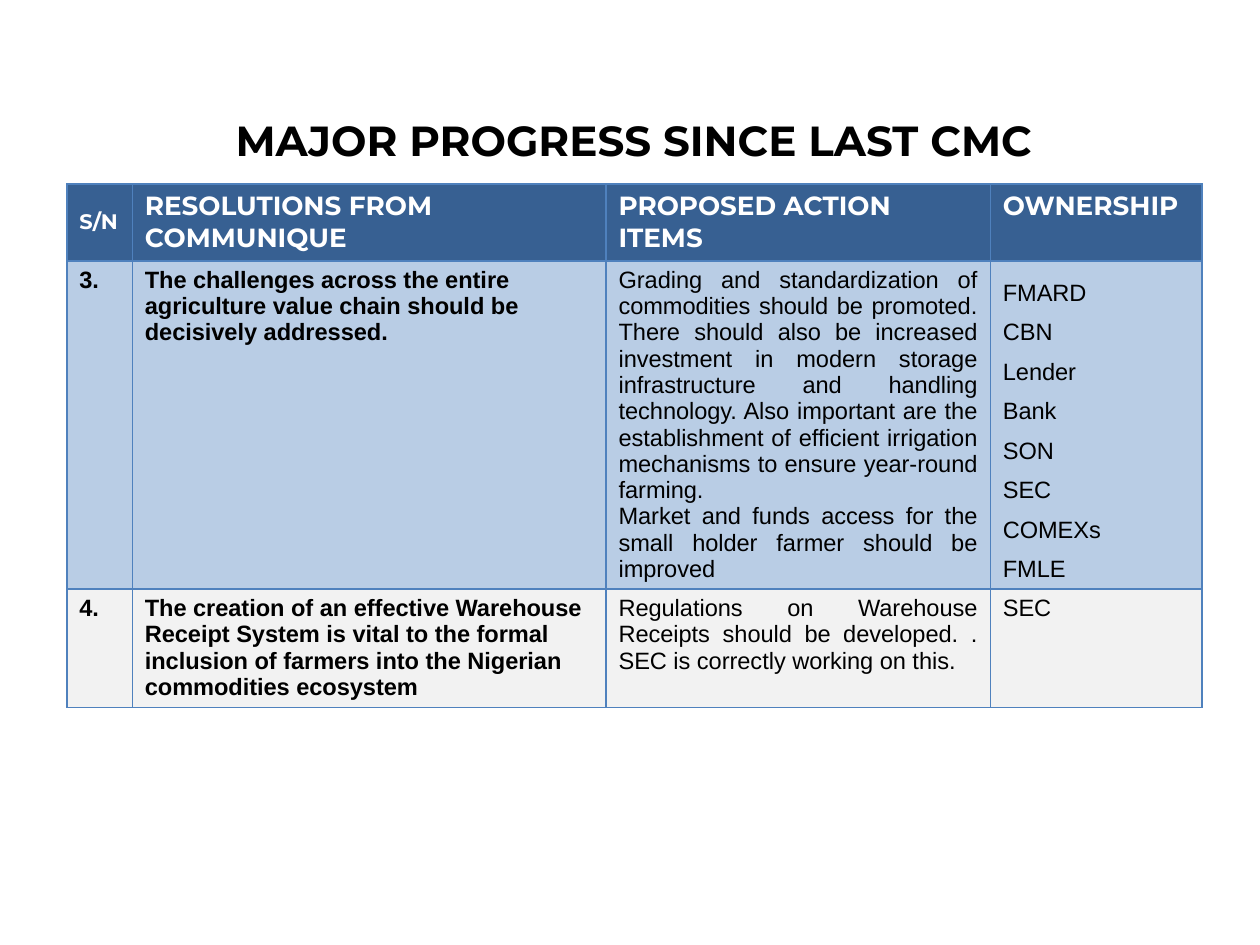
from lxml import etree
from pptx import Presentation
from pptx.dml.color import RGBColor
from pptx.enum.text import MSO_ANCHOR, PP_ALIGN
from pptx.oxml.ns import qn
from pptx.util import Inches, Pt

LEFT, CENTER, JUSTIFY = PP_ALIGN.LEFT, PP_ALIGN.CENTER, PP_ALIGN.JUSTIFY
TOP, MIDDLE = MSO_ANCHOR.TOP, MSO_ANCHOR.MIDDLE

COLORS = {"header": "376092", "blue": "B9CDE5", "grey": "F2F2F2",
          "border": "4F81BD", "black": "000000", "white": "FFFFFF"}

TITLE = "MAJOR PROGRESS SINCE LAST CMC"
HEADERS = ["S/N", "RESOLUTIONS FROM COMMUNIQUE", "PROPOSED ACTION ITEMS", "OWNERSHIP"]
# Each cell is a list of paragraphs.
RESOLUTIONS = [
    [["3."],
     ["The challenges across the entire agriculture value chain should be "
      "decisively addressed."],
     ["Grading and standardization of commodities should be promoted. There should "
      "also be increased investment in modern storage infrastructure and handling "
      "technology. Also important are the establishment of efficient irrigation "
      "mechanisms to ensure year-round farming.",
      "Market and funds access for the small holder farmer should be improved"],
     ["FMARD", "CBN", "Lender", "Bank", "SON", "SEC", "COMEXs", "FMLE"]],
    [["4."],
     ["The creation of an effective Warehouse Receipt System is vital to the formal "
      "inclusion of farmers into the Nigerian commodities ecosystem"],
     ["Regulations on Warehouse Receipts should be developed. . SEC is correctly "
      "working on this."],
     ["SEC"]],
]

MARGIN, CONTENT_WIDTH = 0.53, 9
TITLE_TOP, TITLE_HEIGHT, TABLE_TOP = 0.83, 0.55, 1.46
COLUMN_WIDTHS = [0.52, 3.76, 3.05, 1.68]
ROW_HEIGHTS = [0.61, 2.6, 0.94]
ROW_FILLS = ["header", "blue", "grey"]


def write(frame, paragraphs, size=13.5, font="Arial", color="black", bold=False,
          align=LEFT, spacing=None):
    for index, text in enumerate(paragraphs):
        paragraph = frame.paragraphs[0] if index == 0 else frame.add_paragraph()
        paragraph.alignment = align
        if spacing:
            paragraph.line_spacing = spacing
        run = paragraph.add_run()
        run.text = text
        run.font.size, run.font.name, run.font.bold = Pt(size), font, bold
        run.font.color.rgb = RGBColor.from_string(COLORS[color])


def add_borders(cell, color, width=1):
    """Draw all four sides; the lines must precede the cell's fill in the XML."""
    properties = cell._tc.get_or_add_tcPr()
    for index, side in enumerate(("a:lnL", "a:lnR", "a:lnT", "a:lnB")):
        line = etree.Element(qn(side), w=str(Pt(width)))
        fill = etree.SubElement(line, qn("a:solidFill"))
        etree.SubElement(fill, qn("a:srgbClr"), val=COLORS[color])
        properties.insert(index, line)


def add_title(slide):
    title = slide.shapes.title
    title.left, title.top = Inches(MARGIN), Inches(TITLE_TOP)
    title.width, title.height = Inches(CONTENT_WIDTH), Inches(TITLE_HEIGHT)
    title.text_frame.vertical_anchor = MIDDLE
    write(title.text_frame, [TITLE], size=24, font="Montserrat", bold=True, align=CENTER)


def add_progress_table(slide):
    table = slide.shapes.add_table(
        len(ROW_HEIGHTS), len(COLUMN_WIDTHS), Inches(MARGIN), Inches(TABLE_TOP),
        Inches(CONTENT_WIDTH), Inches(sum(ROW_HEIGHTS))).table
    for column, width in zip(table.columns, COLUMN_WIDTHS):
        column.width = Inches(width)
    for row, height, fill in zip(table.rows, ROW_HEIGHTS, ROW_FILLS):
        row.height = Inches(height)
        for cell in row.cells:
            cell.fill.solid()
            cell.fill.fore_color.rgb = RGBColor.from_string(COLORS[fill])
            add_borders(cell, "border")

    for column, header in enumerate(HEADERS):
        cell = table.cell(0, column)
        cell.vertical_anchor = MIDDLE if column == 0 else TOP
        write(cell.text_frame, [header], size=12 if column == 0 else 15,
              font="Montserrat", color="white", bold=True)
    for row, resolution in enumerate(RESOLUTIONS, start=1):
        for column, paragraphs in enumerate(resolution):
            write(table.cell(row, column).text_frame, paragraphs, bold=column < 2,
                  align=JUSTIFY if column == 2 else LEFT,
                  spacing=1.5 if column == 3 and len(paragraphs) > 1 else None)


def main():
    deck = Presentation()
    deck.slide_width, deck.slide_height = Inches(10), Inches(7.5)
    slide = deck.slides.add_slide(deck.slide_layouts[5])
    add_title(slide)
    add_progress_table(slide)
    deck.save("out.pptx")


if __name__ == "__main__":
    main()
